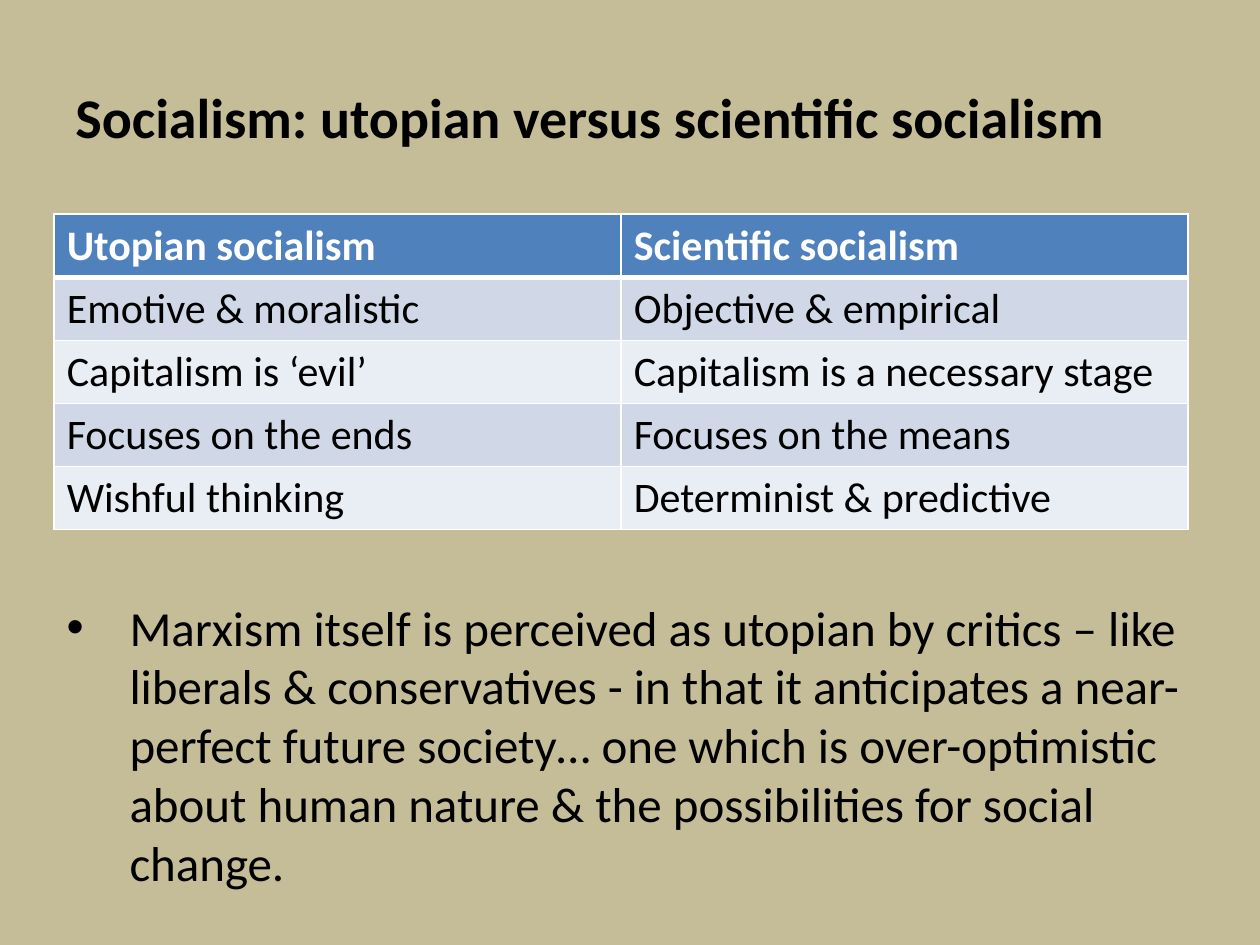
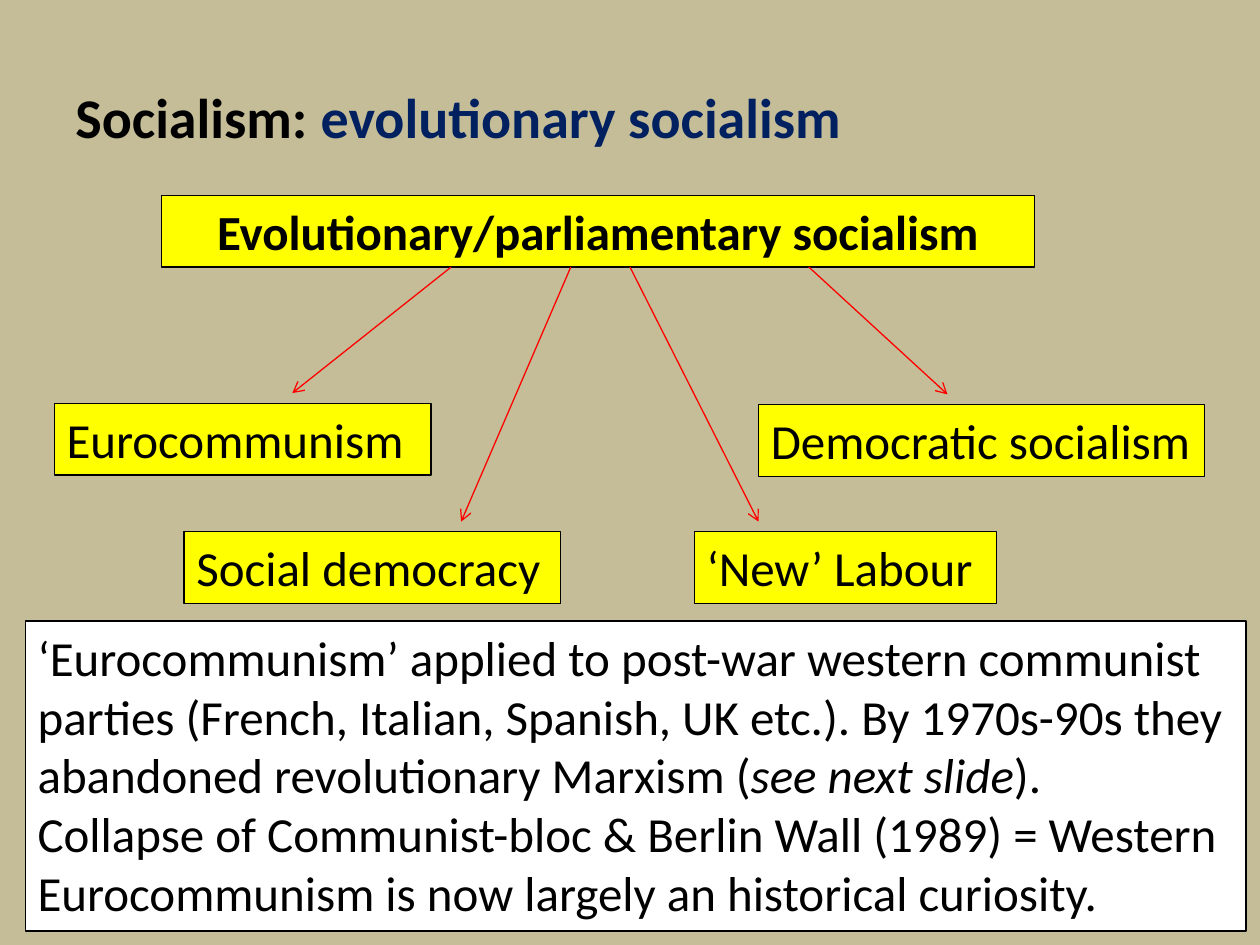
from lxml import etree
from pptx import Presentation
from pptx.dml.color import RGBColor
from pptx.enum.shapes import MSO_CONNECTOR, MSO_SHAPE
from pptx.enum.text import MSO_ANCHOR, PP_ALIGN
from pptx.oxml.ns import qn
from pptx.util import Inches, Pt

RECTANGLE = MSO_SHAPE.RECTANGLE
STRAIGHT = MSO_CONNECTOR.STRAIGHT
LEFT, CENTER = PP_ALIGN.LEFT, PP_ALIGN.CENTER
TOP, MIDDLE = MSO_ANCHOR.TOP, MSO_ANCHOR.MIDDLE

FONT = "Calibri"
TITLE_SIZE, BODY_SIZE, TABLE_SIZE = 32, 28, 24
LINE_WIDTH = 0.75
COLORS = {
    "background": "C4BD97",
    "text": "000000",
    "title_accent": "002060",
    "header": "4F81BD",
    "band_dark": "D0D8E8",
    "band_light": "E9EDF4",
    "white": "FFFFFF",
    "label": "FFFF00",
    "arrow": "FF0000",
}
TITLE_BOX = (0.5, 0.3, 9, 1.25)


def rgb(name):
    return RGBColor.from_string(COLORS[name])


def inches(box):
    return [Inches(length) for length in box]


def add_run(paragraph, text, size=BODY_SIZE, color="text", bold=False, italic=False):
    run = paragraph.add_run()
    run.text = text
    font = run.font
    font.name, font.size = FONT, Pt(size)
    font.bold, font.italic = bold, italic
    font.color.rgb = rgb(color)


def add_slide(prs, title_runs):
    """Add a slide with the shared background and title; runs are (text, colour)."""
    slide = prs.slides.add_slide(prs.slide_layouts[6])
    slide.background.fill.solid()
    slide.background.fill.fore_color.rgb = rgb("background")
    frame = slide.shapes.add_textbox(*inches(TITLE_BOX)).text_frame
    frame.word_wrap = True
    frame.vertical_anchor = MIDDLE
    for text, color in title_runs:
        add_run(frame.paragraphs[0], text, TITLE_SIZE, color, bold=True)
    return slide


def add_panel(slide, box, fill, paragraphs, align=LEFT):
    """Add an outlined rectangle; each paragraph is a list of (text, style) runs."""
    panel = slide.shapes.add_shape(RECTANGLE, *inches(box))
    panel.shadow.inherit = False
    panel.fill.solid()
    panel.fill.fore_color.rgb = rgb(fill)
    panel.line.color.rgb = rgb("text")
    panel.line.width = Pt(LINE_WIDTH)
    frame = panel.text_frame
    frame.word_wrap = True
    frame.vertical_anchor = TOP
    for index, runs in enumerate(paragraphs):
        paragraph = frame.add_paragraph() if index else frame.paragraphs[0]
        paragraph.alignment = align
        for text, style in runs:
            add_run(paragraph, text, **style)


def add_arrow(slide, start, end):
    arrow = slide.shapes.add_connector(STRAIGHT, *inches(start + end))
    arrow.line.color.rgb = rgb("arrow")
    arrow.line.width = Pt(LINE_WIDTH)
    properties = arrow.line._get_or_add_ln()
    etree.SubElement(properties, qn("a:tailEnd"), type="arrow")
    etree.SubElement(properties.getparent(), qn("a:effectLst"))


def set_borders(cell, top, bottom):
    """Draw white borders, 1 pt at the sides and the given widths elsewhere."""
    properties = cell._tc.get_or_add_tcPr()
    for side, width in (("L", 1), ("R", 1), ("T", top), ("B", bottom)):
        border = etree.SubElement(properties, qn(f"a:ln{side}"), w=str(Pt(width)))
        fill = etree.SubElement(border, qn("a:solidFill"))
        etree.SubElement(fill, qn("a:srgbClr"), val=COLORS["white"])


def add_comparison(slide, box, rows):
    table = slide.shapes.add_table(len(rows), len(rows[0]), *inches(box)).table
    for r, texts in enumerate(rows):
        is_header = r == 0
        fill = "header" if is_header else ("band_light", "band_dark")[r % 2]
        for c, text in enumerate(texts):
            cell = table.cell(r, c)
            set_borders(cell, top=3 if r == 1 else 1, bottom=3 if is_header else 1)
            cell.fill.solid()
            cell.fill.fore_color.rgb = rgb(fill)
            add_run(cell.text_frame.paragraphs[0], text, TABLE_SIZE,
                    "white" if is_header else "text", bold=is_header)


def add_bullet(slide, box, text):
    frame = slide.shapes.add_textbox(*inches(box)).text_frame
    frame.word_wrap = True
    paragraph = frame.paragraphs[0]
    properties = paragraph._p.get_or_add_pPr()
    properties.set("marL", str(Inches(0.5)))
    properties.set("indent", str(Inches(-0.5)))
    etree.SubElement(properties, qn("a:buFont"), typeface="Arial")
    etree.SubElement(properties, qn("a:buChar"), char="•")
    add_run(paragraph, text)


def add_branches(slide, box, heading, branches):
    """Add a heading box and an arrow to each branch label.

    A branch is (text, label box, arrow start x, arrow end x).
    """
    left, top, width, height = box
    add_panel(slide, box, "label", [[(heading, {"bold": True})]], CENTER)
    for text, label_box, start_x, end_x in branches:
        add_panel(slide, label_box, "label", [[(text, {})]])
        add_arrow(slide, (start_x, top + height), (end_x, label_box[1] - 0.08))


def build_comparison_slide(prs):
    slide = add_slide(prs, [("Socialism: utopian versus scientific socialism", "text")])
    add_comparison(slide, (0.43, 1.7, 9, 2.5), [
        ("Utopian socialism", "Scientific socialism"),
        ("Emotive & moralistic", "Objective & empirical"),
        ("Capitalism is ‘evil’", "Capitalism is a necessary stage"),
        ("Focuses on the ends", "Focuses on the means"),
        ("Wishful thinking", "Determinist & predictive"),
    ])
    add_bullet(slide, (0.43, 4.69, 9.06, 2.46),
               "Marxism itself is perceived as utopian by critics – like liberals & "
               "conservatives - in that it anticipates a near-perfect future society… "
               "one which is over-optimistic about human nature & the possibilities "
               "for social change.")


def build_evolutionary_slide(prs):
    slide = add_slide(prs, [("Socialism: ", "text"),
                            ("evolutionary socialism", "title_accent")])
    add_branches(slide, (1.28, 1.55, 6.93, 0.57), "Evolutionary/parliamentary socialism", [
        ("Eurocommunism", (0.43, 3.2, 2.99, 0.57), 3.58, 2.32),
        ("Social democracy", (1.46, 4.22, 2.99, 0.57), 4.53, 3.66),
        ("‘New’ Labour", (5.51, 4.22, 2.4, 0.57), 5, 6.02),
        ("Democratic socialism", (6.02, 3.21, 3.54, 0.57), 6.42, 7.52),
    ])
    add_panel(slide, (0.2, 4.93, 9.69, 2.46), "white", [
        [("‘Eurocommunism’ applied to post-war western communist parties (French, "
          "Italian, Spanish, UK etc.). By 1970s-90s they abandoned revolutionary "
          "Marxism (", {}),
         ("see next slide", {"italic": True}),
         (").", {})],
        [("Collapse of Communist-bloc & Berlin Wall (1989) = Western Eurocommunism "
          "is now largely an historical curiosity.", {})],
    ])


def main():
    prs = Presentation()
    prs.slide_width, prs.slide_height = Inches(10), Inches(7.5)
    build_comparison_slide(prs)
    build_evolutionary_slide(prs)
    prs.save("out.pptx")


if __name__ == "__main__":
    main()
